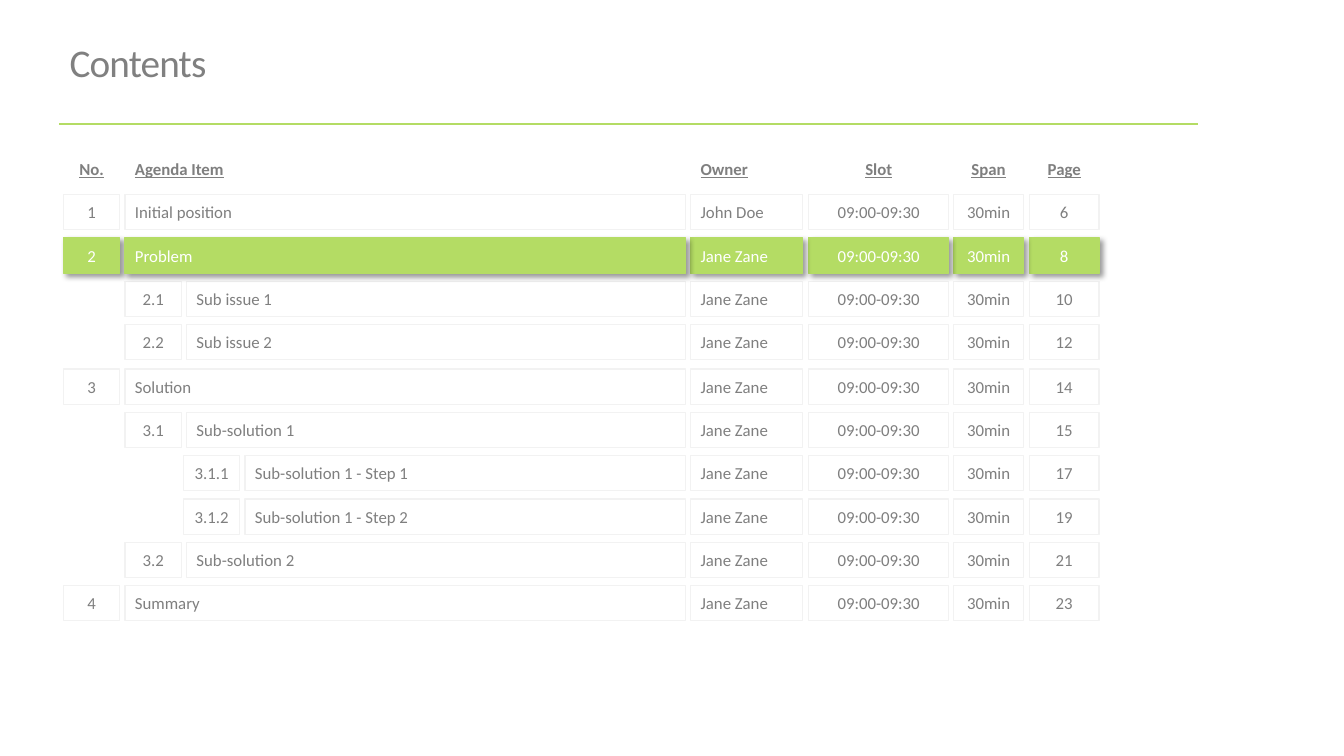
from lxml import etree
from pptx import Presentation
from pptx import util as u
from pptx.dml.color import RGBColor
from pptx.enum import shapes, text
from pptx.oxml import ns

PX = 9144
GREEN, GREY, PALE, WHITE = "B4DC64", "7F7F7F", "F2F2F2", "FFFFFF"
LEFT, CENTER = text.PP_ALIGN.LEFT, text.PP_ALIGN.CENTER

TOP, PITCH, CELL_HEIGHT = 150, 43.1, 35
NUMBER_LEFTS, NUMBER_WIDTH, ITEM_OFFSET, ITEM_RIGHT = (63, 124, 182), 56, 61, 680
DETAIL_COLUMNS = [(685, 111, LEFT), (802, 139, CENTER), (946, 69, CENTER), (1021, 69, CENTER)]

HEADINGS = ("No.", "Agenda Item", "Owner", "Slot", "Span", "Page")
SLOT, SPAN = "09:00-09:30", "30min"
CURRENT = "2"
AGENDA = [
    ("1", "Initial position", "John Doe", "6"),
    ("2", "Problem", "Jane Zane", "8"),
    ("2.1", "Sub issue 1", "Jane Zane", "10"),
    ("2.2", "Sub issue 2", "Jane Zane", "12"),
    ("3", "Solution", "Jane Zane", "14"),
    ("3.1", "Sub-solution 1", "Jane Zane", "15"),
    ("3.1.1", "Sub-solution 1 - Step 1", "Jane Zane", "17"),
    ("3.1.2", "Sub-solution 1 - Step 2", "Jane Zane", "19"),
    ("3.2", "Sub-solution 2", "Jane Zane", "21"),
    ("4", "Summary", "Jane Zane", "23"),
]


def px(*lengths):
    return [u.Emu(length * PX) for length in lengths]


def color(hex_string):
    return RGBColor.from_string(hex_string)


def format_font(font, size, hex_string):
    font.name = "Calibri"
    font.size = u.Pt(size)
    font.color.rgb = color(hex_string)


def write_label(box, label, align, hex_string, tight):
    frame = box.text_frame
    frame.text = label
    frame.word_wrap = not tight
    frame.vertical_anchor = text.MSO_ANCHOR.MIDDLE
    if tight:
        frame.margin_left = frame.margin_top = frame.margin_right = frame.margin_bottom = 0
    paragraph = frame.paragraphs[0]
    paragraph.alignment = align
    font = paragraph.runs[0].font
    format_font(font, 12, hex_string)
    return font


def add_shadow(cell):
    effects = cell._element.spPr.find(ns.qn("a:effectLst"))
    shadow = etree.SubElement(effects, ns.qn("a:outerShdw"), blurRad=str(u.Pt(4)),
                              dist=str(u.Pt(3)), dir="2700000", algn="tl", rotWithShape="0")
    black = etree.SubElement(shadow, ns.qn("a:srgbClr"), val="000000")
    etree.SubElement(black, ns.qn("a:alpha"), val="40000")


def add_heading(slide, bounds, label, align, tight):
    heading = slide.shapes.add_textbox(*px(*bounds))
    font = write_label(heading, label, align, GREY, tight)
    font.bold = font.underline = True


def add_cell(slide, bounds, label, align, tight, current):
    cell = slide.shapes.add_shape(shapes.MSO_SHAPE.RECTANGLE, *px(*bounds))
    cell.shadow.inherit = False
    cell.line.color.rgb = color(GREEN if current else PALE)
    cell.line.width = u.Pt(0.85)
    if current:
        cell.fill.solid()
        cell.fill.fore_color.rgb = color(GREEN)
        add_shadow(cell)
    else:
        cell.fill.background()
    write_label(cell, label, align, WHITE if current else GREY, tight)


def row_cells(index, level, labels):
    top = TOP + round(PITCH * index)
    number_left = NUMBER_LEFTS[level]
    item_left = number_left + ITEM_OFFSET
    number = (number_left, NUMBER_WIDTH, CENTER)
    item = (item_left, ITEM_RIGHT - item_left, LEFT)
    columns = [item, number] + DETAIL_COLUMNS
    ordered = [labels[1], labels[0], *labels[2:]]
    for column, label in reversed(list(zip(columns, ordered))):
        left, width, align = column
        yield (left, top, width, CELL_HEIGHT), label, align, column is number


def add_title(slide):
    title = slide.shapes.title
    title.left, title.top, title.width, title.height = px(59, 18, 1125, 93)
    title.text_frame.text = "Contents"
    title.text_frame.vertical_anchor = text.MSO_ANCHOR.MIDDLE
    paragraph = title.text_frame.paragraphs[0]
    paragraph.alignment = LEFT
    paragraph.line_spacing = 0.9
    run = paragraph.runs[0]
    format_font(run.font, 28, "808080")
    run._r.get_or_add_rPr().set("spc", "-60")


def add_title_rule(slide):
    rule = slide.shapes.add_connector(shapes.MSO_CONNECTOR.STRAIGHT, *px(59, 123, 1188, 123))
    rule.line.color.rgb = color(GREEN)
    rule.line.width = u.Pt(2)
    etree.SubElement(rule._element.spPr, ns.qn("a:effectLst"))


def main():
    deck = Presentation()
    deck.slide_width, deck.slide_height = px(1333, 750)
    slide = deck.slides.add_slide(deck.slide_layouts[5])
    add_title(slide)
    add_title_rule(slide)
    for index, (number, item, owner, page) in reversed(list(enumerate(AGENDA, 1))):
        labels = (number, item, owner, SLOT, SPAN, page)
        for cell in row_cells(index, number.count("."), labels):
            add_cell(slide, *cell, number == CURRENT)
    for heading in row_cells(0, 0, HEADINGS):
        add_heading(slide, *heading)
    deck.save("out.pptx")


if __name__ == "__main__":
    main()
